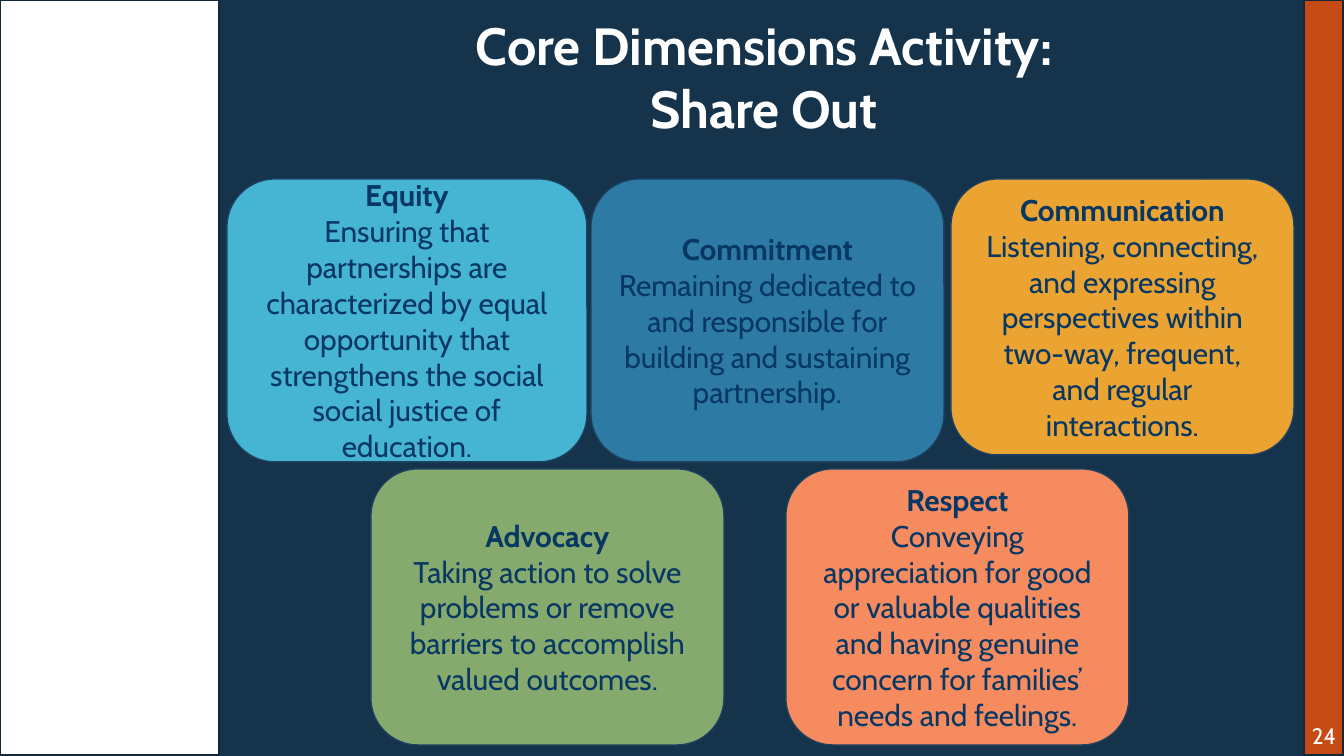
"""Build the Core Dimensions share-out slide."""
import pptx
import pptx.dml.color
import pptx.enum.shapes
import pptx.enum.text
import pptx.oxml
import pptx.oxml.ns
import pptx.util

SCALE = 914400 / 134.4
WIDE, HIGH = 1344, 756
INSET = 13
FONT = "Cabin"
NAVY, WHITE, INK = "15334B", "FFFFFF", "073763"
EDGE, RIM = "11283A", "1D4261"

TITLE = ["Core Dimensions Activity:", "Share Out"]
PAGE = "24"
BANDS = [(1304, 40, "C54A13"), (0, 219, WHITE)]
ROWS = [
    (179, [
        (227, 360, 283, "46B5D3", 100, "Equity",
         "Ensuring that partnerships are characterized by equal opportunity "
         "that strengthens the social social justice of education."),
        (591, 353, 283, "2F81AC", 93, "Commitment",
         "Remaining dedicated to and responsible for building and sustaining "
         "partnership."),
        (951, 343, 276, "EBA432", 100, "Communication",
         "Listening, connecting, and expressing perspectives within two-way, "
         "frequent, and regular interactions."),
    ]),
    (469, [
        (371, 353, 276, "86AA6D", 100, "Advocacy",
         "Taking action to solve problems or remove barriers to accomplish "
         "valued outcomes."),
        (786, 343, 276, "F68B5F", 100, "Respect",
         "Conveying appreciation for good or valuable qualities and having "
         "genuine concern for families’ needs and feelings."),
    ]),
]


def px(num):
    return pptx.util.Emu(round(num * SCALE))


def tint(code):
    return pptx.dml.color.RGBColor.from_string(code)


def paint(fill, code, alpha=100):
    fill.solid()
    fill.fore_color.rgb = tint(code)
    if alpha < 100:
        node = fill._xPr.find(".//" + pptx.oxml.ns.qn("a:srgbClr"))
        pptx.oxml.ns.qn("a:alpha")
        mark = pptx.oxml.parse_xml(
            f'<a:alpha {pptx.oxml.ns.nsdecls("a")} val="{alpha * 1000}"/>')
        node.append(mark)


def block(slide, kind, place, code, line, width, alpha=100):
    kinds = pptx.enum.shapes.MSO_SHAPE
    shape = slide.shapes.add_shape(getattr(kinds, kind), *map(px, place))
    shape.shadow.inherit = False
    paint(shape.fill, code, alpha)
    shape.line.color.rgb = tint(line)
    shape.line.width = pptx.util.Pt(width)
    return shape


def write(shape, lines, size, code, anchor, inset=INSET):
    frame = shape.text_frame
    frame.word_wrap = True
    frame.auto_size = pptx.enum.text.MSO_AUTO_SIZE.NONE
    frame.vertical_anchor = getattr(pptx.enum.text.MSO_ANCHOR, anchor)
    frame.margin_left = frame.margin_right = px(inset)
    frame.margin_top = frame.margin_bottom = px(inset)
    for num, (text, bold) in enumerate(lines):
        para = frame.add_paragraph() if num else frame.paragraphs[0]
        para.alignment = pptx.enum.text.PP_ALIGN.CENTER
        run = para.add_run()
        run.text = text
        run.font.name = FONT
        run.font.size = pptx.util.Pt(size)
        run.font.bold = bold
        run.font.color.rgb = tint(code)


def main():
    deck = pptx.Presentation()
    deck.slide_width, deck.slide_height = px(WIDE), px(HIGH)
    slide = deck.slides.add_slide(deck.slide_layouts[5])
    paint(slide.background.fill, NAVY)

    for left, wide, code in BANDS:
        block(slide, "RECTANGLE", (left, 0, wide, HIGH), code, EDGE, 1.5)

    page = slide.shapes.add_textbox(*map(px, (1304, 716, 40, 40)))
    write(page, [(PAGE, False)], 12, WHITE, "MIDDLE", 0)

    title = slide.shapes.title
    title.left, title.top, title.width, title.height = map(
        px, (211, 0, 1106, 153))
    write(title, [(text, True) for text in TITLE], 28, WHITE, "TOP")

    for top, cards in ROWS:
        for left, wide, high, code, alpha, head, body in cards:
            card = block(slide, "ROUNDED_RECTANGLE", (left, top, wide, high),
                         code, RIM, 0.75, alpha)
            card.adjustments[0] = 0.17
            write(card, [(head, True), (body, False)], 16, INK, "MIDDLE")

    deck.save("out.pptx")


if __name__ == "__main__":
    main()
